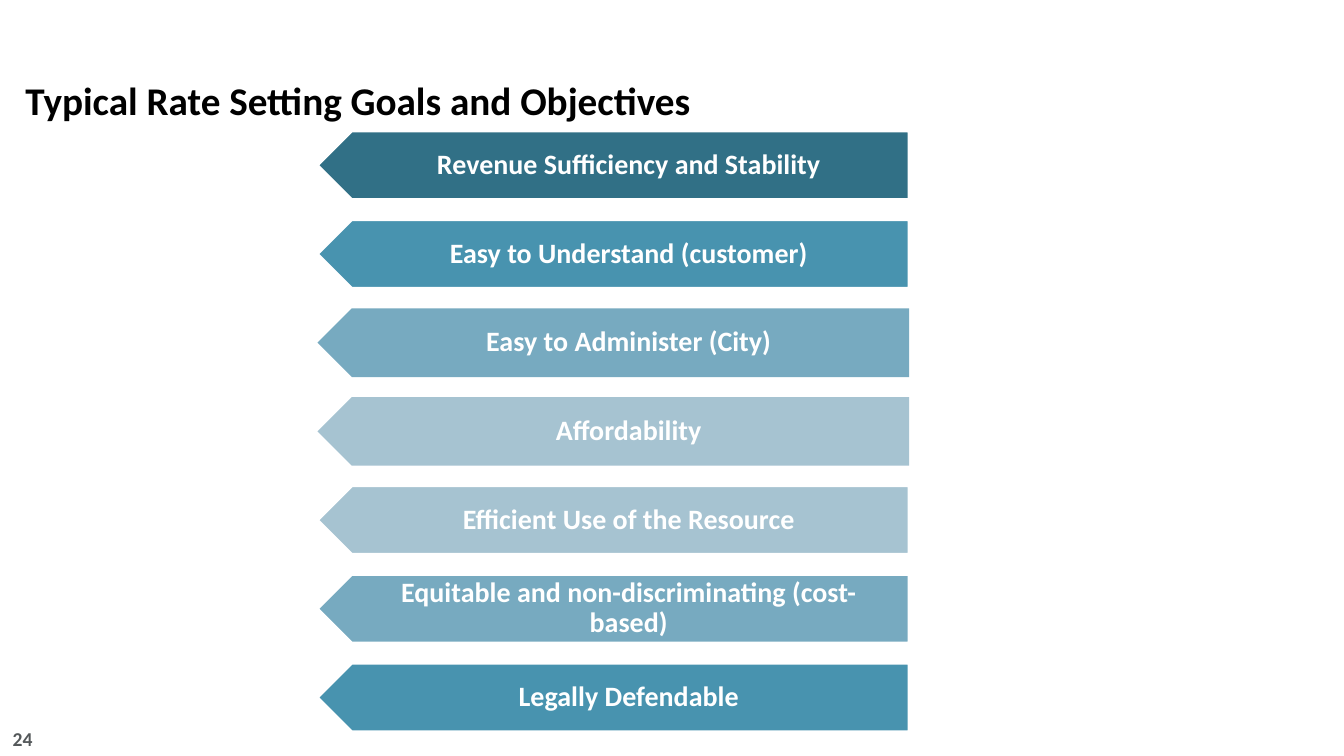
from dataclasses import dataclass

from pptx import Presentation
from pptx.dml.color import RGBColor
from pptx.enum.shapes import MSO_SHAPE as Shape
from pptx.enum.text import MSO_ANCHOR as Anchor, MSO_AUTO_SIZE as AutoSize, PP_ALIGN as Align
from pptx.util import Cm, Pt

TITLE = "Typical Rate Setting Goals and Objectives"
SLIDE_NUMBER = "24"
GOALS = [
    ("Revenue Sufficiency and Stability", "deep", True),
    ("Easy to Understand (customer)", "strong", True),
    ("Easy to Administer (City)", "medium", False),
    ("Affordability", "pale", False),
    ("Efficient Use of the Resource", "pale", True),
    ("Equitable and non-discriminating (cost-based)", "medium", True),
    ("Legally Defendable", "strong", True),
]

SLIDE_WIDTH, SLIDE_HEIGHT = 33.87, 19.05
TITLE_HEIGHT = 3.23
ARROW_LEFT, ARROW_WIDTH = 8, 14.91
LABEL_LEFT, LABEL_WIDTH = 8.43, 14.48
FIRST_TOP, ROW_HEIGHT, ROW_PITCH = 3.3, 1.73, 2.235
NUMBER_BOX = (0, 18.19, 1.07, 0.86)


@dataclass(frozen=True)
class Theme:
    font: str = "Calibri"
    title_size: int = 28
    label_size: int = 20
    number_size: int = 14
    outline_width: int = 2
    deep: str = "317086"
    strong: str = "4893AF"
    medium: str = "77AAC0"
    pale: str = "A6C3D1"
    black: str = "000000"
    white: str = "FFFFFF"
    gray: str = "54585A"


THEME = Theme()


def color(name):
    return RGBColor.from_string(getattr(THEME, name))


def place(shape, left, top, width, height):
    shape.left, shape.top = Cm(left), Cm(top)
    shape.width, shape.height = Cm(width), Cm(height)


def write(shape, text, size, color_name, align, anchor, insets, line_spacing=None):
    frame = shape.text_frame
    frame.word_wrap = True
    frame.auto_size = AutoSize.NONE
    frame.vertical_anchor = anchor
    frame.margin_left, frame.margin_top, frame.margin_right, frame.margin_bottom = map(Cm, insets)
    paragraph = frame.paragraphs[0]
    paragraph.alignment = align
    paragraph.line_spacing = line_spacing
    run = paragraph.add_run()
    run.text = text
    run.font.name = THEME.font
    run.font.size = Pt(size)
    run.font.bold = True
    run.font.color.rgb = color(color_name)


def add_text_box(slide, box, *text_options):
    write(slide.shapes.add_textbox(*map(Cm, box)), *text_options)


def add_goal(slide, index, label, fill_name, outlined):
    top = FIRST_TOP + index * ROW_PITCH
    arrow_box = (ARROW_LEFT, top, ARROW_WIDTH, ROW_HEIGHT)
    arrow = slide.shapes.add_shape(Shape.PENTAGON, *map(Cm, arrow_box))
    arrow.rotation = 180
    arrow.shadow.inherit = False
    arrow.fill.solid()
    arrow.fill.fore_color.rgb = color(fill_name)
    if outlined:
        arrow.line.color.rgb = color("white")
        arrow.line.width = Pt(THEME.outline_width)
    else:
        arrow.line.fill.background()
    add_text_box(slide, (LABEL_LEFT, top, LABEL_WIDTH, ROW_HEIGHT), label, THEME.label_size,
                 "white", Align.CENTER, Anchor.MIDDLE, (0.76, 0.2, 0.41, 0.2), 0.9)


def main():
    """Build the rate setting goals slide."""
    presentation = Presentation()
    presentation.slide_width, presentation.slide_height = Cm(SLIDE_WIDTH), Cm(SLIDE_HEIGHT)
    slide = presentation.slides.add_slide(presentation.slide_layouts[5])
    title = slide.shapes.title
    place(title, 0, 0, SLIDE_WIDTH, TITLE_HEIGHT)
    write(title, TITLE, THEME.title_size, "black", Align.LEFT, Anchor.BOTTOM,
          (0.64, 0.13, 0.64, 0.13), Pt(26))
    for index, goal in enumerate(GOALS):
        add_goal(slide, index, *goal)
    add_text_box(slide, NUMBER_BOX, SLIDE_NUMBER, THEME.number_size, "gray",
                 Align.RIGHT, Anchor.TOP, (0.25, 0.13, 0.25, 0.13))
    presentation.save("out.pptx")


if __name__ == "__main__":
    main()
